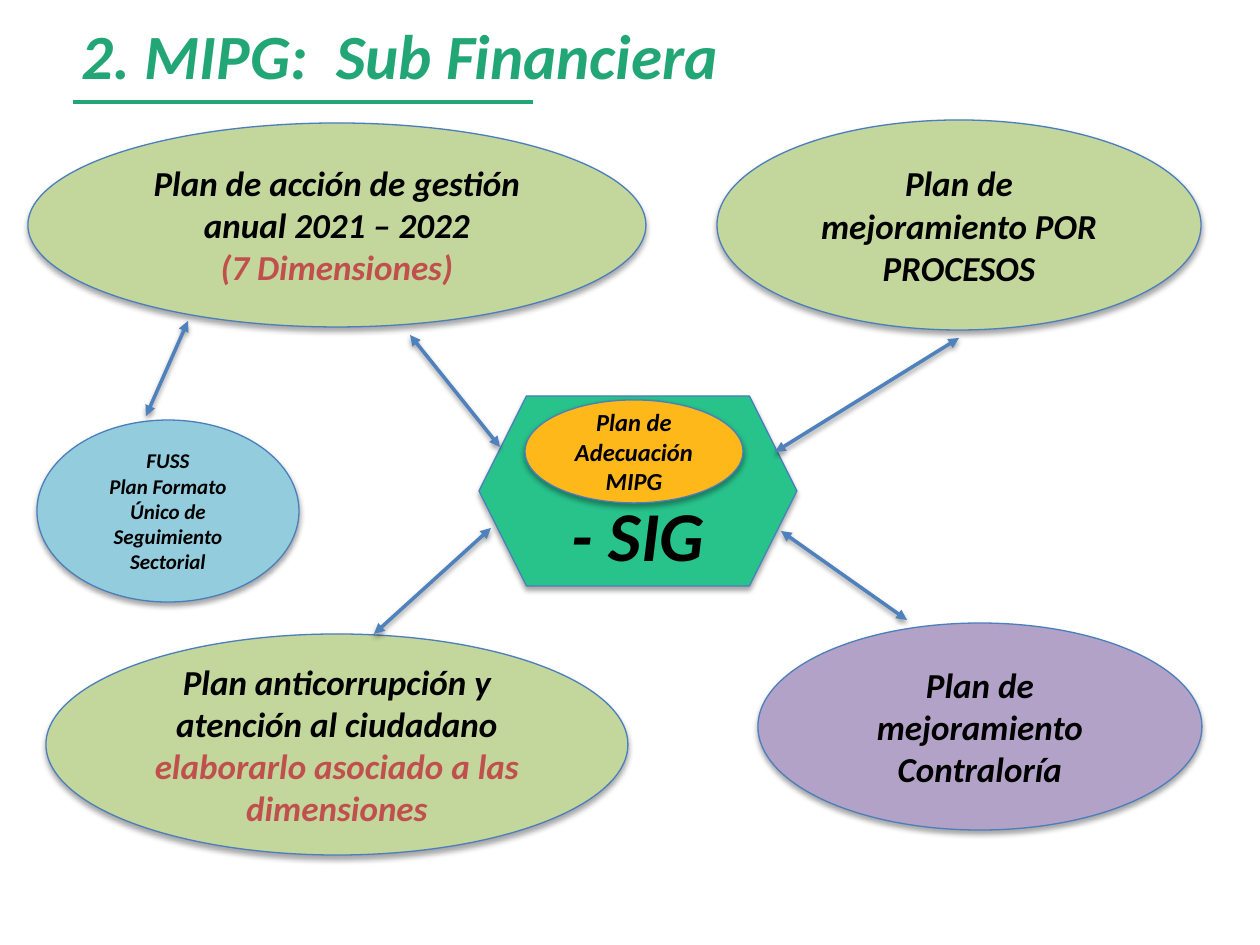
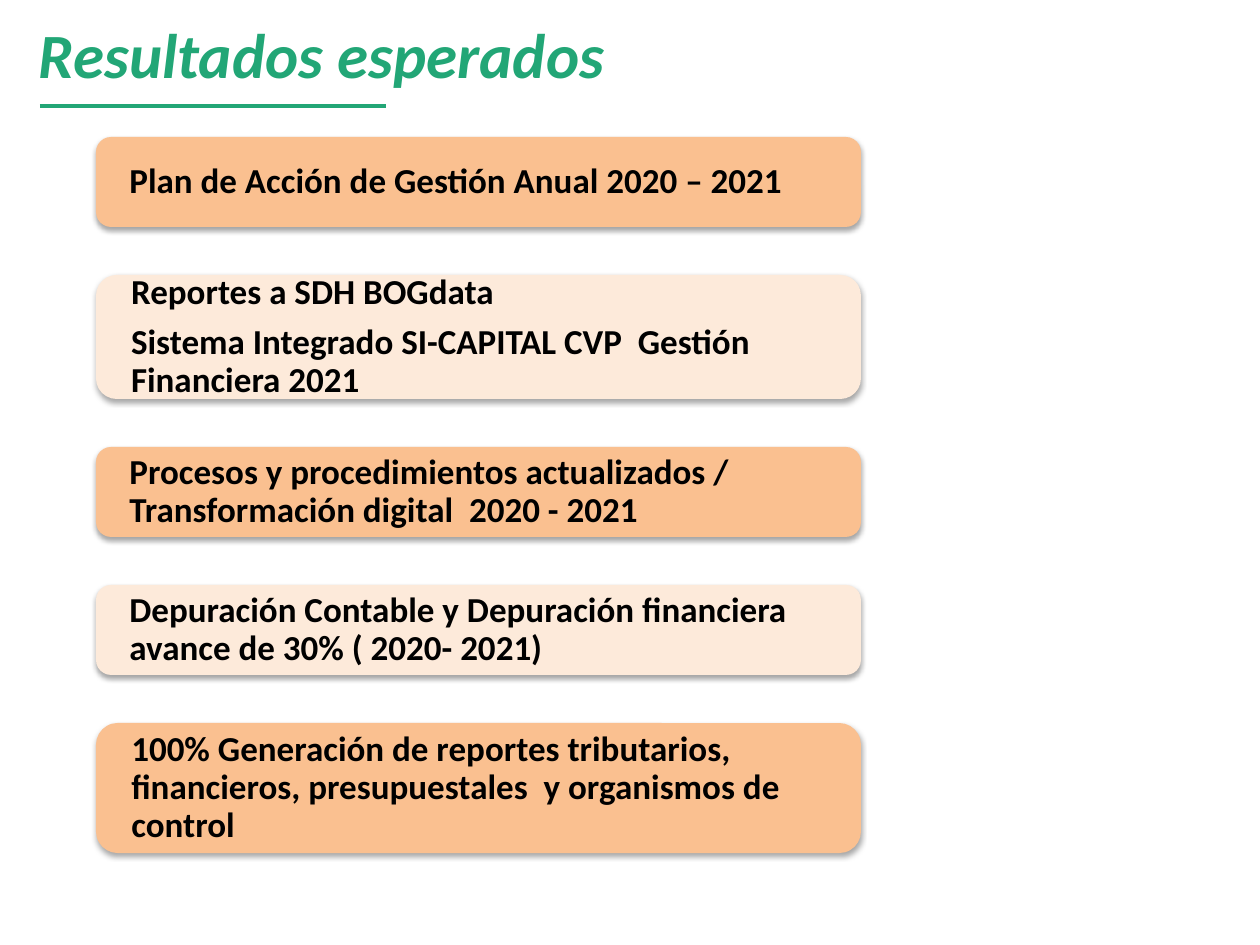
from lxml.etree import SubElement
from pptx import Presentation
from pptx.dml.color import RGBColor
from pptx.enum.shapes import MSO_CONNECTOR, MSO_SHAPE
from pptx.enum.text import MSO_ANCHOR, PP_ALIGN
from pptx.oxml.ns import qn
from pptx.util import Emu, Pt

PX_PER_INCH = 126
FONT = "Calibri"
COLORS = {
    "title": "22A676",
    "text": "000000",
    "accent": "C0504D",
    "outline": "4B7EBC",
    "arrow": "4F81BD",
    "plan": "C3D69B",
    "audit": "B3A2C7",
    "sector": "93CDDD",
    "hub": "28C28B",
    "adaptation": "FFB819",
    "card_strong": "FAC090",
    "card_soft": "FDEADA",
}


def px(length):
    return Emu(round(length * 914400 / PX_PER_INCH))


def rgb(name):
    return RGBColor.from_string(COLORS[name])


# Shared formatting

def set_shadow(shape, opacity=0, distance=0):
    """Replace the theme effects with a soft drop shadow, or with none."""
    properties = shape._element.spPr
    effects = properties.find(qn("a:effectLst"))
    if effects is None:
        effects = SubElement(properties, qn("a:effectLst"))
    if opacity:
        shadow = SubElement(effects, qn("a:outerShdw"), blurRad=str(Pt(3.1)),
                            dist=str(Pt(distance)), dir="5400000", rotWithShape="0")
        color = SubElement(shadow, qn("a:srgbClr"), val="000000")
        SubElement(color, qn("a:alpha"), val=str(opacity * 1000))


def write(shape, text, size, color="text", align=PP_ALIGN.LEFT, italic=True, accent=""):
    """Fill a shape with bold text, ending in an accented run if given."""
    frame = shape.text_frame
    frame.text = text
    frame.word_wrap = True
    frame.vertical_anchor = MSO_ANCHOR.MIDDLE
    accent_run = None
    if accent:
        accent_run = frame.paragraphs[-1].add_run()
        accent_run.text = accent
    for paragraph in frame.paragraphs:
        paragraph.alignment = align
        for run in paragraph.runs:
            run.font.name = FONT
            run.font.size = Pt(size)
            run.font.bold = True
            run.font.italic = italic
            run.font.color.rgb = rgb(color)
    if accent_run:
        accent_run.font.color.rgb = rgb("accent")
    return frame


def set_insets(frame, left, top, right, bottom):
    frame.margin_left, frame.margin_top = px(left), px(top)
    frame.margin_right, frame.margin_bottom = px(right), px(bottom)


# Kinds of element

def add_rule(slide, start, end, color):
    rule = slide.shapes.add_connector(MSO_CONNECTOR.STRAIGHT, *map(px, (*start, *end)))
    rule.line.color.rgb = rgb(color)
    rule.line.width = Pt(2)
    return rule


def add_title(slide, text, box, underline):
    title = slide.shapes.add_textbox(*map(px, box))
    set_insets(write(title, text, 36, "title"), 9, 5, 9, 5)
    left, right, y = underline
    set_shadow(add_rule(slide, (left, y), (right, y), "title"))


def add_arrow(slide, start, end):
    arrow = add_rule(slide, start, end, "arrow")
    line = arrow._element.spPr.find(qn("a:ln"))
    for tip in ("a:headEnd", "a:tailEnd"):
        SubElement(line, qn(tip), type="triangle")
    set_shadow(arrow, 38, 1.6)


def add_filled(slide, preset, box, fill):
    shape = slide.shapes.add_shape(preset, *map(px, box))
    shape.fill.solid()
    shape.fill.fore_color.rgb = rgb(fill)
    shape.line.fill.background()
    shape.shadow.inherit = False
    set_shadow(shape, 35, 1.8)
    return shape


def add_node(slide, box, fill, text, size=20, accent="", preset=MSO_SHAPE.OVAL):
    node = add_filled(slide, preset, box, fill)
    node.line.color.rgb = rgb("outline")
    node.line.width = Pt(0.75)
    return write(node, text, size, align=PP_ALIGN.CENTER, accent=accent)


def add_card(slide, box, fill, text):
    card = add_filled(slide, MSO_SHAPE.ROUNDED_RECTANGLE, box, fill)
    frame = write(card, text, 20, italic=False)
    set_insets(frame, 29, 0, 29, 0)
    for paragraph in frame.paragraphs:
        paragraph.line_spacing = 0.9
        paragraph.space_after = Pt(7)


# Slides

def build_plans(slide):
    add_title(slide, "2. MIPG:  Sub Financiera", (73, -5, 1071, 118), (73, 533, 102))

    # Plans around the hub
    add_node(slide, (28, 123, 618, 204), "plan",
             "Plan de acción de gestión anual 2021 – 2022\n", accent="(7 Dimensiones)")
    add_node(slide, (717, 120, 484, 210), "plan", "Plan de mejoramiento POR PROCESOS")
    add_node(slide, (46, 634, 582, 221), "plan",
             "Plan anticorrupción y atención al ciudadano ",
             accent="elaborarlo asociado a las dimensiones")
    add_node(slide, (758, 623, 444, 207), "audit", "Plan de mejoramiento Contraloría")
    add_node(slide, (37, 420, 262, 182), "sector",
             "FUSS\nPlan Formato Único de Seguimiento Sectorial", 12)

    # Hub, with its label below the adaptation plan
    hub = add_node(slide, (479, 396, 318, 190), "hub", "- SIG", 40, preset=MSO_SHAPE.HEXAGON)
    hub.margin_top = px(91)

    for start, end in (
        ((410, 335), (500, 447)),
        ((781, 531), (907, 620)),
        ((775, 452), (959, 338)),
        ((188, 321), (146, 416)),
        ((374, 634), (491, 528)),
    ):
        add_arrow(slide, start, end)

    add_node(slide, (525, 400, 218, 103), "adaptation", "Plan de Adecuación MIPG", 14)


def build_results(slide):
    add_title(slide, "Resultados esperados", (30, 9, 747, 88), (40, 386, 106))

    # Stack of cards in alternating tones, evenly spaced
    results = (
        (90, "Plan de Acción de Gestión Anual 2020 – 2021"),
        (124, "Reportes a SDH BOGdata\n"
              "Sistema Integrado SI-CAPITAL CVP  Gestión Financiera 2021"),
        (90, "Procesos y procedimientos actualizados / Transformación digital  2020 - 2021"),
        (90, "Depuración Contable y Depuración financiera avance de 30% ( 2020- 2021)"),
        (130, "100% Generación de reportes tributarios, financieros, "
              "presupuestales  y organismos de control"),
    )
    top, gap = 137, 48
    for index, (height, text) in enumerate(results):
        fill = "card_soft" if index % 2 else "card_strong"
        add_card(slide, (96, top, 765, height), fill, text)
        top += height + gap


def main():
    deck = Presentation()
    deck.slide_width, deck.slide_height = px(1260), px(945)
    blank = deck.slide_layouts[6]
    for build in (build_plans, build_results):
        build(deck.slides.add_slide(blank))
    deck.save("out.pptx")


if __name__ == "__main__":
    main()
